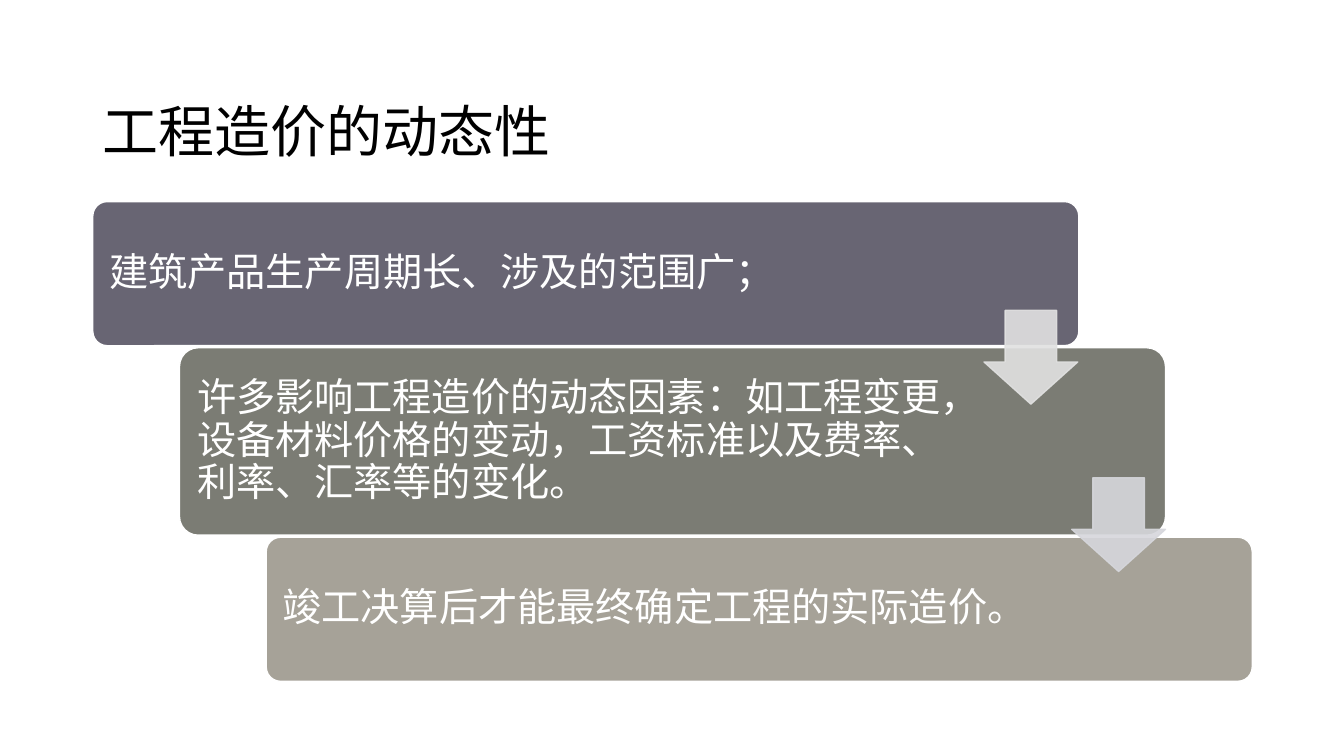
from dataclasses import dataclass

from lxml import etree
from pptx import Presentation
from pptx.dml.color import RGBColor
from pptx.enum.shapes import MSO_SHAPE as SHAPE
from pptx.enum.text import MSO_ANCHOR as ANCHOR, MSO_AUTO_SIZE as AUTO, PP_ALIGN as ALIGN
from pptx.oxml.ns import qn
from pptx.util import Emu, Pt

PX = 9144  # 100 px to the inch
CJK = "Noto Sans CJK SC"
STEP_X, STEP_W = 86, 978
ARROW = 93


@dataclass
class Step:
    top: int
    height: int
    fill: str
    text: str


@dataclass
class Arrow:
    top: int
    fill: str


STEPS = [
    Step(200, 143, "686573", "建筑产品生产周期长、涉及的范围广；"),
    Step(345, 186, "7B7C74", "许多影响工程造价的动态因素：如工程变更，设备材料价格的变动，"
                             "工资标准以及费率、利率、汇率等的变化。"),
    Step(533, 143, "A6A298", "竣工决算后才能最终确定工程的实际造价。"),
]
ARROWS = [Arrow(308, "E1E1E1"), Arrow(474, "D6D7DC")]


def px(n: int) -> Emu:
    return Emu(n * PX)


def rgb(color: str) -> RGBColor:
    return RGBColor.from_string(color)


def set_text(s, text: str, size: int, font: str, color: str, spacing: float) -> None:
    tf = s.text_frame
    tf.text = text
    tf.word_wrap = True
    tf.auto_size = AUTO.NONE
    tf.vertical_anchor = ANCHOR.MIDDLE
    p = tf.paragraphs[0]
    p.alignment = ALIGN.LEFT
    p.line_spacing = spacing
    r = p.runs[0]
    r.font.size = Pt(size)
    r.font.name = font
    r.font.color.rgb = rgb(color)
    etree.SubElement(r.font._element, qn("a:ea"), typeface=CJK)


def add_block(slide, kind: SHAPE, left: int, top: int, width: int, height: int,
              adjust: list[float], fill: str, line: str):
    s = slide.shapes.add_shape(kind, px(left), px(top), px(width), px(height))
    s.shadow.inherit = False
    for i, value in enumerate(adjust):
        s.adjustments[i] = value
    s.fill.solid()
    s.fill.fore_color.rgb = rgb(fill)
    s.line.color.rgb = rgb(line)
    s.line.width = Pt(1)
    return s


def add_step(slide, i: int, step: Step) -> None:
    s = add_block(slide, SHAPE.ROUNDED_RECTANGLE, 92 + i * STEP_X, step.top,
                  STEP_W, step.height, [0.1], step.fill, "FFFFFF")
    set_text(s, step.text, 28, CJK, "FFFFFF", 0.9)
    tf = s.text_frame
    tf.margin_left = tf.margin_top = tf.margin_bottom = px(12)
    tf.margin_right = px(192)  # keeps the text clear of the arrows


def add_arrow(slide, i: int, arrow: Arrow) -> None:
    s = add_block(slide, SHAPE.DOWN_ARROW, 976 + i * STEP_X + i, arrow.top,
                  ARROW, ARROW, [0.55, 0.45], arrow.fill, arrow.fill)
    # 90 % opacity for fill and line
    for color in s._element.spPr.iter(qn("a:srgbClr")):
        etree.SubElement(color, qn("a:alpha"), val="90000")


def main() -> None:
    prs = Presentation()
    prs.slide_width, prs.slide_height = px(1333), px(750)
    slide = prs.slides.add_slide(prs.slide_layouts[5])

    # Title
    title = slide.shapes.title
    title.left, title.top, title.width, title.height = map(px, (92, 40, 1150, 145))
    set_text(title, "工程造价的动态性", 40, "Times New Roman", "000000", 1.5)

    # Staircase of steps, then the arrows on top
    for i, step in enumerate(STEPS):
        add_step(slide, i, step)
    for i, arrow in enumerate(ARROWS):
        add_arrow(slide, i, arrow)

    prs.save("out.pptx")


if __name__ == "__main__":
    main()
